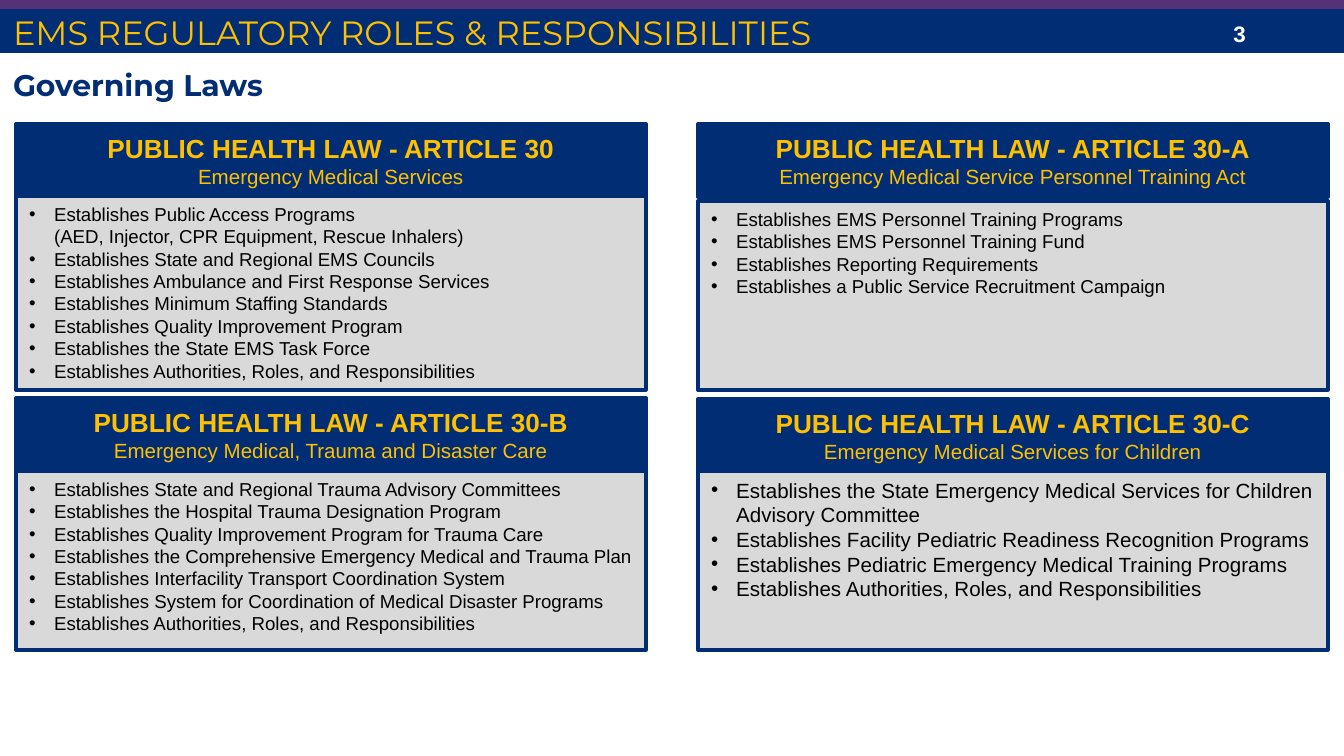
from lxml import etree
from pptx import Presentation
from pptx.dml.color import RGBColor
from pptx.enum.shapes import MSO_SHAPE
from pptx.enum.text import MSO_ANCHOR, PP_ALIGN
from pptx.oxml.ns import qn
from pptx.util import Pt

RECTANGLE = MSO_SHAPE.RECTANGLE
LEFT, CENTER = PP_ALIGN.LEFT, PP_ALIGN.CENTER
TOP, MIDDLE, BOTTOM = MSO_ANCHOR.TOP, MSO_ANCHOR.MIDDLE, MSO_ANCHOR.BOTTOM

COLORS = {"navy": "002D73", "purple": "553278", "gold": "FFC000",
          "gray": "D9D9D9", "black": "000000", "white": "FFFFFF"}

TITLE = "EMS REGULATORY ROLES & RESPONSIBILITIES"
SUBTITLE = "Governing Laws"
PAGE_NUMBER = "3"

# column, header top, body top and bottom, and text size of each law
LAWS = [
    {"name": "PUBLIC HEALTH LAW - ARTICLE 30",
     "subject": "Emergency Medical Services",
     "column": 0, "top": 124, "body": (196, 390), "size": 10,
     "points": ["Establishes Public Access Programs\n(AED, Injector, CPR Equipment, Rescue Inhalers)",
                "Establishes State and Regional EMS Councils",
                "Establishes Ambulance and First Response Services",
                "Establishes Minimum Staffing Standards",
                "Establishes Quality Improvement Program",
                "Establishes the State EMS Task Force",
                "Establishes Authorities, Roles, and Responsibilities"]},
    {"name": "PUBLIC HEALTH LAW - ARTICLE 30-A",
     "subject": "Emergency Medical Service Personnel Training Act",
     "column": 1, "top": 124, "body": (201, 390), "size": 10,
     "points": ["Establishes EMS Personnel Training Programs",
                "Establishes EMS Personnel Training Fund",
                "Establishes Reporting Requirements",
                "Establishes a Public Service Recruitment Campaign"]},
    {"name": "PUBLIC HEALTH LAW - ARTICLE 30-B",
     "subject": "Emergency Medical, Trauma and Disaster Care",
     "column": 0, "top": 398, "body": (471, 650), "size": 10,
     "points": ["Establishes State and Regional Trauma Advisory Committees",
                "Establishes the Hospital Trauma Designation Program",
                "Establishes Quality Improvement Program for Trauma Care",
                "Establishes the Comprehensive Emergency Medical and Trauma Plan",
                "Establishes Interfacility Transport Coordination System",
                "Establishes System for Coordination of Medical Disaster Programs",
                "Establishes Authorities, Roles, and Responsibilities"]},
    {"name": "PUBLIC HEALTH LAW - ARTICLE 30-C",
     "subject": "Emergency Medical Services for Children",
     "column": 1, "top": 399, "body": (471, 650), "size": 11,
     "points": ["Establishes the State Emergency Medical Services for Children Advisory Committee",
                "Establishes Facility Pediatric Readiness Recognition Programs",
                "Establishes Pediatric Emergency Medical Training Programs",
                "Establishes Authorities, Roles, and Responsibilities"]},
]

SLIDE_WIDTH, SLIDE_HEIGHT = 1344, 756
MARGIN, CARD_WIDTH, HEADER_HEIGHT = 16, 630, 73
COLUMN_STEP = SLIDE_WIDTH - 2 * MARGIN - CARD_WIDTH
BULLET_INDENT = 25


def px(value):
    return round(value * 9144000 / SLIDE_WIDTH)


def color(name):
    return RGBColor.from_string(COLORS[name])


def place(shape, left, top, width, height):
    shape.left, shape.top = px(left), px(top)
    shape.width, shape.height = px(width), px(height)


def add_rectangle(slide, box, fill, line=None):
    shape = slide.shapes.add_shape(RECTANGLE, *map(px, box))
    shape.shadow.inherit = False
    shape.fill.solid()
    shape.fill.fore_color.rgb = color(fill)
    if line:
        shape.line.color.rgb = color(line)
        shape.line.width = Pt(2)
    else:
        shape.line.fill.background()
    return shape


def add_bullet(paragraph):
    properties = paragraph._p.get_or_add_pPr()
    properties.set("marL", str(px(BULLET_INDENT)))
    properties.set("indent", str(-px(BULLET_INDENT)))
    etree.SubElement(properties, qn("a:buFont")).set("typeface", "Arial")
    etree.SubElement(properties, qn("a:buChar")).set("char", "•")


def remove_bullet(paragraph):
    properties = paragraph._p.get_or_add_pPr()
    properties.set("marL", "0")
    properties.set("indent", "0")
    etree.SubElement(properties, qn("a:buNone"))


def style(paragraph, size, color_name, bold=False, align=LEFT, font="Arial"):
    paragraph.alignment = align
    paragraph.space_before = Pt(0)
    paragraph.font.name = font
    paragraph.font.size = Pt(size)
    paragraph.font.bold = bold
    paragraph.font.color.rgb = color(color_name)


def fill_heading(placeholder, box, text, anchor, inset_top):
    place(placeholder, *box)
    frame = placeholder.text_frame
    frame.text = text
    frame.word_wrap = True
    frame.vertical_anchor = anchor
    frame.margin_left = frame.margin_right = px(13)
    frame.margin_top, frame.margin_bottom = px(inset_top), 0
    return frame.paragraphs[0]


def add_law(slide, law):
    left = MARGIN + law["column"] * COLUMN_STEP
    header = add_rectangle(slide, (left, law["top"], CARD_WIDTH, HEADER_HEIGHT), "navy", "navy")
    frame = header.text_frame
    frame.vertical_anchor = MIDDLE
    frame.text = law["name"]
    style(frame.paragraphs[0], 14, "gold", bold=True, align=CENTER)
    subject = frame.add_paragraph()
    subject.text = law["subject"]
    style(subject, 11, "gold", align=CENTER)

    top, bottom = law["body"]
    body = add_rectangle(slide, (left, top, CARD_WIDTH, bottom - top), "gray", "navy")
    frame = body.text_frame
    frame.vertical_anchor = TOP
    for index, point in enumerate(law["points"]):
        paragraph = frame.add_paragraph() if index else frame.paragraphs[0]
        paragraph.text = point
        add_bullet(paragraph)
        style(paragraph, law["size"], "black")


def main():
    presentation = Presentation()
    presentation.slide_width, presentation.slide_height = px(SLIDE_WIDTH), px(SLIDE_HEIGHT)
    slide = presentation.slides.add_slide(presentation.slide_layouts[1])
    title, subtitle = slide.placeholders

    # The bands belong behind the title
    for box, fill in [((0, 9, SLIDE_WIDTH, 44), "navy"), ((0, -3, SLIDE_WIDTH, 12), "purple")]:
        band = add_rectangle(slide, box, fill)
        title._element.addprevious(band._element)

    heading = fill_heading(title, (0, 12, SLIDE_WIDTH, 40), TITLE, BOTTOM, 0)
    style(heading, 18, "gold", font="Montserrat")
    heading = fill_heading(subtitle, (0, 54, SLIDE_WIDTH, 50), SUBTITLE, TOP, 13)
    remove_bullet(heading)
    style(heading, 16, "navy", bold=True, font="Montserrat")

    number = slide.shapes.add_textbox(px(1220), px(13), px(101), px(40)).text_frame
    number.word_wrap = True
    number.vertical_anchor = MIDDLE
    number.text = PAGE_NUMBER
    style(number.paragraphs[0], 12, "white", bold=True)

    for law in LAWS:
        add_law(slide, law)
    presentation.save("out.pptx")


if __name__ == "__main__":
    main()
